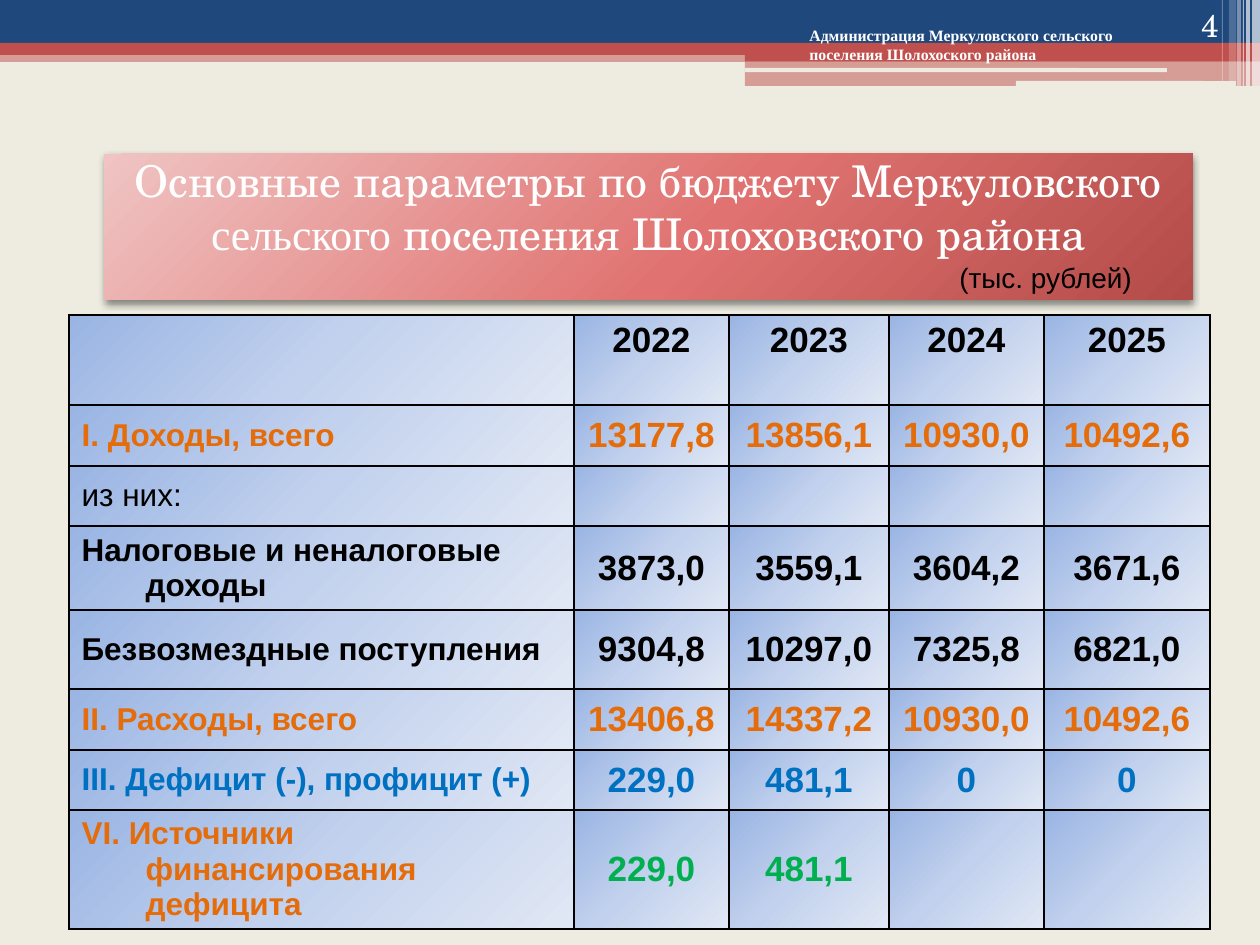
"""Build the budget parameters slide for the Merkulovskoe rural settlement."""
from dataclasses import dataclass

from pptx import Presentation
from pptx.dml.color import RGBColor
from pptx.enum.shapes import MSO_SHAPE
from pptx.enum.text import MSO_ANCHOR, MSO_AUTO_SIZE, PP_ALIGN
from pptx.oxml import parse_xml
from pptx.oxml.ns import nsdecls
from pptx.util import Emu, Pt


@dataclass(frozen=True)
class Theme:
    paper: str = "EEECE1"
    navy: str = "1F497D"
    red: str = "C0504D"
    white: str = "FFFFFF"
    black: str = "000000"
    orange: str = "E46C0A"
    blue: str = "0070C0"
    green: str = "00B050"
    title_stops: tuple = ((0, "EFC4C3"), (55, "E07371"), (100, "B34B48"))
    cell_stops: tuple = ((0, "9AB5E4"), (50, "C2D1ED"), (100, "E1E8F5"))
    serif: str = "TeX Gyre Schola"
    times: str = "Times New Roman"
    sans: str = "Arial"
    title_size: int = 25
    value_size: int = 20
    label_size: int = 18
    unit_size: int = 16
    header_size: int = 9


def append_xml(parent, tag, attributes="", content=""):
    parent.append(parse_xml(f"<a:{tag} {nsdecls('a')} {attributes}>{content}</a:{tag}>"))


def append_gradient(parent, stops):
    stop_list = "".join(
        f'<a:gs pos="{position * 1000}"><a:srgbClr val="{color}"/></a:gs>'
        for position, color in stops
    )
    append_xml(parent, "gradFill", 'rotWithShape="1"',
               f'<a:gsLst>{stop_list}</a:gsLst><a:lin ang="2700000" scaled="0"/>')


theme = Theme()
PX = 914400 / 126
presentation = Presentation()
presentation.slide_width = Emu(round(1260 * PX))
presentation.slide_height = Emu(round(945 * PX))
slide = presentation.slides.add_slide(presentation.slide_layouts[5])
slide.background.fill.solid()
slide.background.fill.fore_color.rgb = RGBColor.from_string(theme.paper)

bands = [
    (0, 50, 1260, 12, theme.red, 50),
    (0, 0, 1260, 43, theme.navy, 100),
    (0, 43, 1260, 12, theme.red, 100),
    (745, 49, 515, 12, theme.red, 100),
    (745, 61, 515, 25, theme.red, 50),
    (745, 68, 422, 4, theme.paper, 100),
    (1016, 81, 220, 5, theme.paper, 100),
    (1252, 0, 8, 86, theme.white, 65),
    (1246, 0, 4, 86, theme.white, 65),
    (1243, 0, 1, 86, theme.white, 60),
    (1237, 0, 4, 86, theme.white, 40),
    (1229, 0, 7, 81, theme.white, 20),
    (1222, 0, 1, 81, theme.white, 30),
]
for *place, color, opacity in bands:
    outline = MSO_SHAPE.ROUNDED_RECTANGLE if color == theme.paper else MSO_SHAPE.RECTANGLE
    band = slide.shapes.add_shape(outline, *(Emu(round(length * PX)) for length in place))
    band.shadow.inherit = False
    band.line.fill.background()
    band.fill.solid()
    band.fill.fore_color.rgb = RGBColor.from_string(color)
    if opacity < 100:
        append_xml(band.fill.fore_color._xFill.srgbClr, "alpha", f'val="{opacity * 1000}"')

title = slide.shapes.title
title.left, title.top, title.width, title.height = (
    Emu(round(length * PX)) for length in (104, 154, 1089, 146)
)
append_xml(title._element.spPr, "prstGeom", 'prst="rect"', "<a:avLst/>")
append_gradient(title._element.spPr, theme.title_stops)
append_xml(title._element.spPr, "effectLst", "",
           f'<a:outerShdw blurRad="{Pt(4)}" dist="{Pt(2)}" dir="5400000" rotWithShape="0">'
           f'<a:srgbClr val="{theme.black}"><a:alpha val="45000"/></a:srgbClr></a:outerShdw>')
title.text_frame.auto_size = MSO_AUTO_SIZE.NONE
title.text_frame.vertical_anchor = MSO_ANCHOR.TOP
title.text_frame.margin_top = 0
heading = title.text_frame.paragraphs[0]
heading.alignment = PP_ALIGN.CENTER
heading.font.size = Pt(theme.title_size)
heading.font.color.rgb = RGBColor.from_string(theme.white)
for words, typeface in [
    ("Основные параметры по бюджету Меркуловского ", theme.serif),
    ("сельского", theme.times),
    (" поселения Шолоховского района", theme.serif),
]:
    part = heading.add_run()
    part.text = words
    part.font.name = typeface

budget_rows = [
    (90, theme.black, theme.black, True, ["", "2022", "2023", "2024", "2025"]),
    (61, theme.orange, theme.orange, True,
     ["I. Доходы, всего", "13177,8", "13856,1", "10930,0", "10492,6"]),
    (60, theme.black, theme.black, False, ["из них:", "", "", "", ""]),
    (84, theme.black, theme.black, True,
     ["Налоговые и неналоговые доходы", "3873,0", "3559,1", "3604,2", "3671,6"]),
    (79, theme.black, theme.black, True,
     ["Безвозмездные поступления", "9304,8", "10297,0", "7325,8", "6821,0"]),
    (61, theme.orange, theme.orange, True,
     ["II. Расходы, всего", "13406,8", "14337,2", "10930,0", "10492,6"]),
    (60, theme.blue, theme.blue, True,
     ["III. Дефицит (-), профицит (+)", "229,0", "481,1", "0", "0"]),
    (119, theme.orange, theme.green, True,
     ["VI. Источники финансирования дефицита", "229,0", "481,1", "", ""]),
]
column_widths = [505, 155, 160, 155, 166]
table_height = sum(row[0] for row in budget_rows)
budget = slide.shapes.add_table(
    len(budget_rows), len(column_widths),
    *(Emu(round(length * PX)) for length in (69, 315, sum(column_widths), table_height)),
).table
budget.first_row = budget.horz_banding = False
for column, width in zip(budget.columns, column_widths):
    column.width = Emu(round(width * PX))
hanging = round(64 * PX)
for row_index, (height, label_color, value_color, bold, entries) in enumerate(budget_rows):
    budget.rows[row_index].height = Emu(round(height * PX))
    for column_index, entry in enumerate(entries):
        cell = budget.cell(row_index, column_index)
        cell.vertical_anchor = MSO_ANCHOR.MIDDLE if row_index else MSO_ANCHOR.TOP
        properties = cell._tc.get_or_add_tcPr()
        for side in ("lnL", "lnR", "lnT", "lnB"):
            append_xml(properties, side, f'w="{Pt(1)}"',
                       f'<a:solidFill><a:srgbClr val="{theme.black}"/></a:solidFill>')
        append_gradient(properties, theme.cell_stops)
        if not entry:
            continue
        cell.text = entry
        line = cell.text_frame.paragraphs[0]
        line._p.get_or_add_pPr().set("marL", str(hanging))
        line._p.get_or_add_pPr().set("indent", str(-hanging))
        line.alignment = PP_ALIGN.CENTER if column_index else PP_ALIGN.LEFT
        line.font.name = theme.sans
        line.font.bold = bold
        line.font.size = Pt(theme.value_size if column_index else theme.label_size)
        line.font.color.rgb = RGBColor.from_string(value_color if column_index else label_color)

captions = [
    ((947, 254, 277, 47), "(тыс. рублей)", theme.unit_size, theme.sans, theme.black,
     False, PP_ALIGN.LEFT, MSO_ANCHOR.TOP),
    ((1126, 0, 105, 50), "4", theme.label_size, theme.serif, theme.white,
     False, PP_ALIGN.RIGHT, MSO_ANCHOR.BOTTOM),
    ((797, 20, 392, 50), "Администрация Меркуловского сельского поселения Шолохоского района",
     theme.header_size, theme.times, theme.white, True, PP_ALIGN.LEFT, MSO_ANCHOR.TOP),
]
for place, words, size, typeface, color, bold, alignment, anchor in captions:
    frame = slide.shapes.add_textbox(*(Emu(round(length * PX)) for length in place)).text_frame
    frame.word_wrap = True
    frame.vertical_anchor = anchor
    frame.text = words
    caption = frame.paragraphs[0]
    caption.alignment = alignment
    caption.font.size = Pt(size)
    caption.font.name = typeface
    caption.font.bold = bold
    caption.font.color.rgb = RGBColor.from_string(color)

presentation.save("out.pptx")
